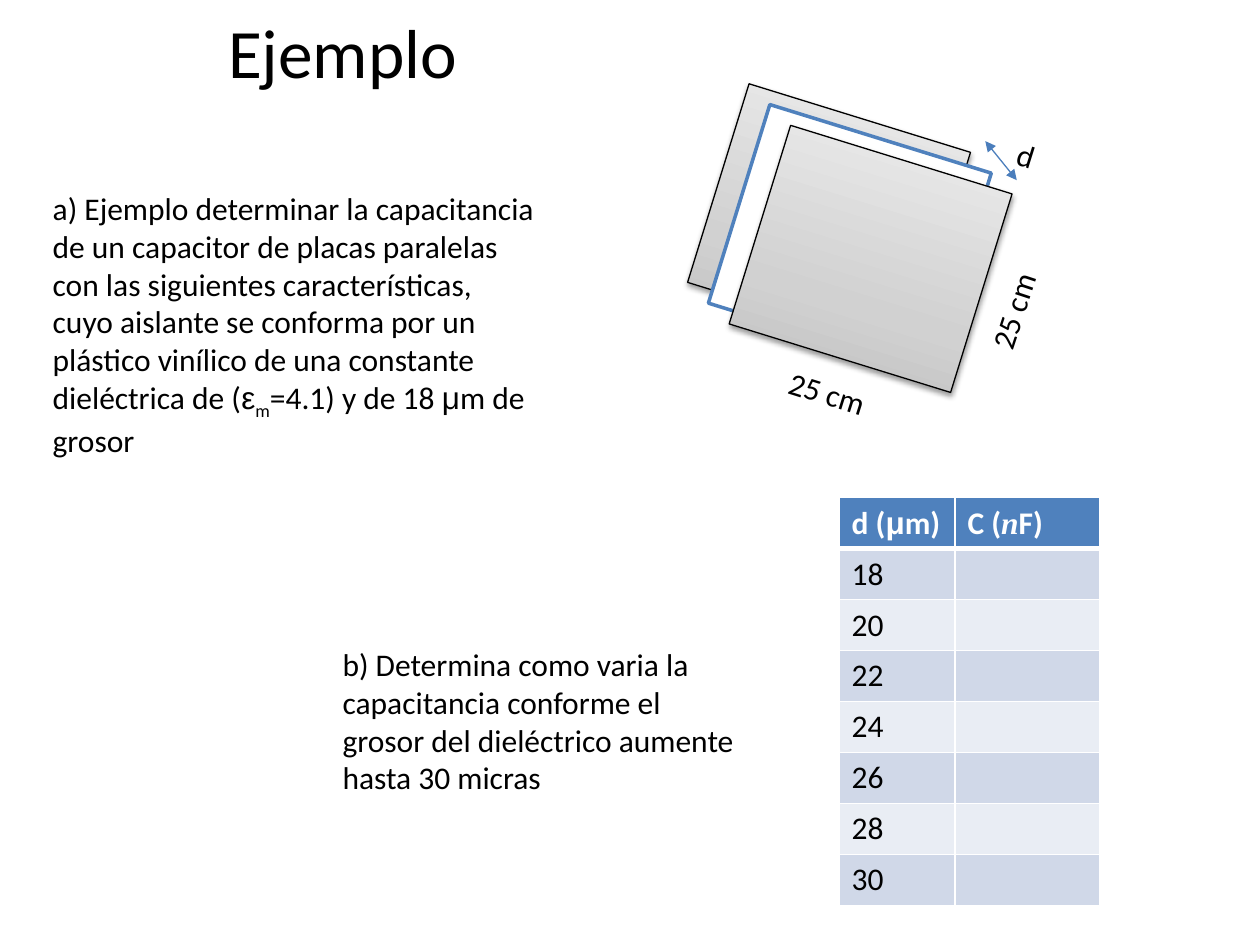
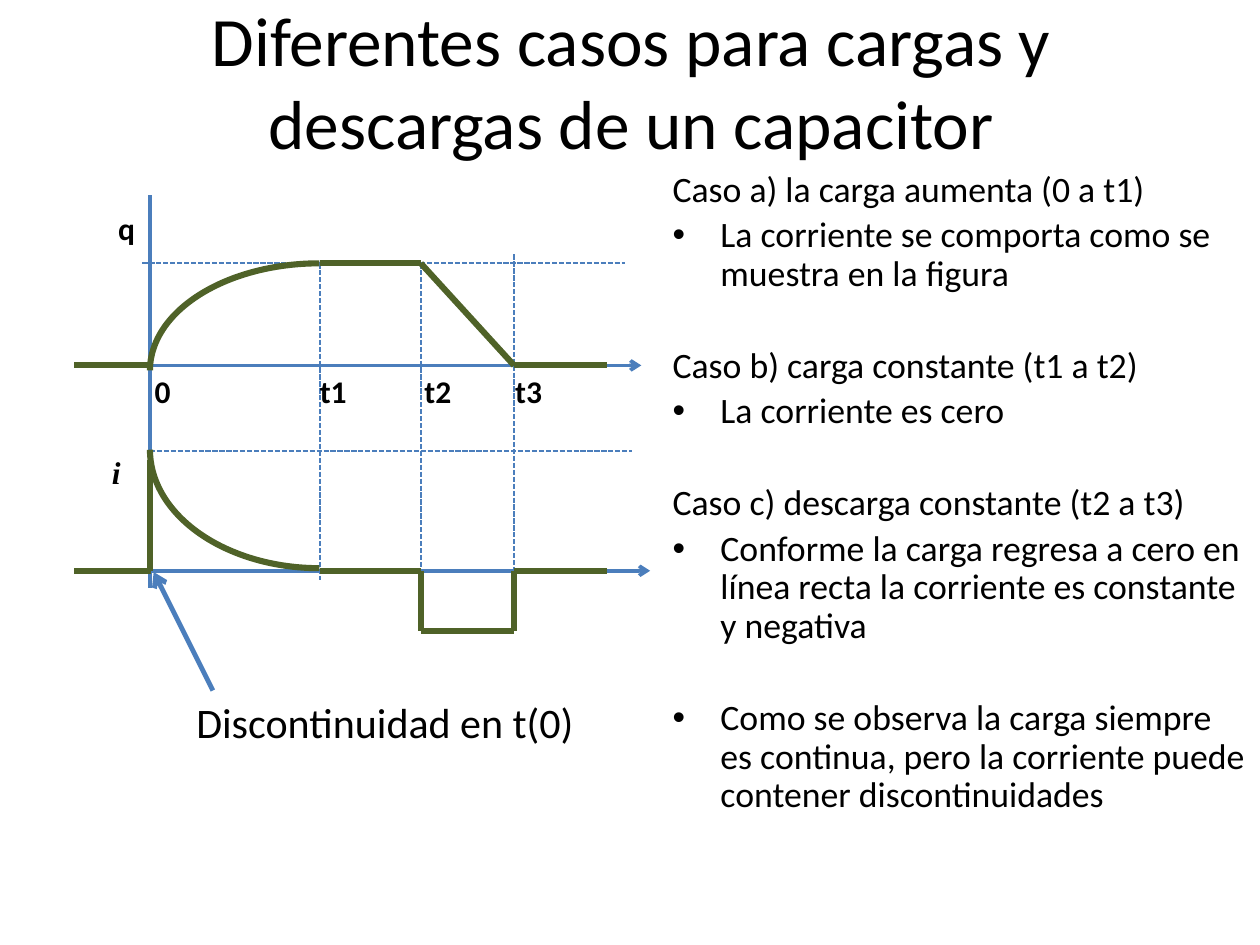
"""Builds two slides on capacitors: a worked example and charge/discharge cases."""
from copy import deepcopy
from dataclasses import dataclass, field
from typing import NamedTuple

from pptx import Presentation, oxml, util as u
from pptx.dml.color import RGBColor
from pptx.enum import dml, shapes, text
from pptx.oxml import ns

COLORS = {"ink": "000000", "paper": "FFFFFF", "header": "4F81BD", "axis": "4B7EBC",
          "trace": "4F6228", "odd_row": "D0D8E8", "even_row": "E9EDF4"}
PLATE_STOPS = ((0, "BDBDBD"), (0.35, "D1D1D1"), (1, "EEEEEE"))
BODY_FONT = {"name": "Calibri", "size": u.Pt(18), "bold": False, "italic": False}
TITLE = {"size": u.Pt(39.6)}
GREEK = {"name": "Arial"}
SYMBOL = {"name": "Times New Roman", "italic": True}
BOLD = {"bold": True}
CASES = {"size": u.Pt(20.4)}


class Box(NamedTuple):
    left: float
    top: float
    width: float
    height: float

    def lengths(self) -> list[u.Length]:
        return [u.Inches(value) for value in self]


class Run(NamedTuple):
    words: str
    font: dict = {}
    baseline: int = 0


@dataclass
class Para:
    runs: list[Run]
    bullet: bool = False
    format: dict = field(default_factory=dict)


@dataclass
class Passage:
    box: Box
    paras: list[Para]
    rotation: float = 0
    wrap: bool = True
    anchor: text.MSO_ANCHOR = text.MSO_ANCHOR.TOP


class Stroke(NamedTuple):
    color: str
    width: float
    dashed: bool = False
    head: str = ""
    tail: str = ""


class Segment(NamedTuple):
    x1: float
    y1: float
    x2: float
    y2: float
    stroke: Stroke


AXIS = Stroke("axis", 2)
TIME_AXIS = Stroke("axis", 2, tail="arrow")
GUIDE = Stroke("axis", 1, dashed=True)
TRACE = Stroke("trace", 3.5)


def rgb(name: str) -> RGBColor:
    return RGBColor.from_string(COLORS.get(name, name))


def assign(target, values: dict) -> None:
    for key, value in values.items():
        setattr(target, key, value)


def write_runs(paragraph, runs: list[Run], color: str = "ink") -> None:
    for piece in runs:
        run = paragraph.add_run()
        run.text = piece.words
        assign(run.font, BODY_FONT | piece.font)
        run.font.color.rgb = rgb(color)
        if piece.baseline:
            run.font._element.set("baseline", str(piece.baseline))


def write_passage(slide, passage: Passage) -> None:
    holder = slide.shapes.add_textbox(*passage.box.lengths())
    holder.rotation = passage.rotation
    frame = holder.text_frame
    assign(frame, {"word_wrap": passage.wrap, "vertical_anchor": passage.anchor})
    for index, para in enumerate(passage.paras):
        paragraph = frame.paragraphs[0] if index == 0 else frame.add_paragraph()
        assign(paragraph, para.format)
        if para.bullet:
            props = paragraph._p.get_or_add_pPr()
            props.set("marL", str(u.Inches(0.38)))
            props.set("indent", str(u.Inches(-0.38)))
            props.append(oxml.parse_xml(f'<a:buFont {ns.nsdecls("a")} typeface="Arial"/>'))
            props.append(oxml.parse_xml(f'<a:buChar {ns.nsdecls("a")} char="•"/>'))
        write_runs(paragraph, para.runs)


def write_title(slide, box: Box, words: str) -> None:
    centred = Para([Run(words, TITLE)], format={"alignment": text.PP_ALIGN.CENTER})
    write_passage(slide, Passage(box, [centred], anchor=text.MSO_ANCHOR.MIDDLE))


def write_label(slide, left: float, top: float, words: str, font: dict = {},
                width: float = 0.5, rotation: float = 0) -> None:
    write_passage(slide, Passage(Box(left, top, width, 0.4), [Para([Run(words, font)])],
                                 rotation, wrap=False))


def apply_stroke(line, stroke: Stroke) -> None:
    line.color.rgb = rgb(stroke.color)
    line.width = u.Pt(stroke.width)
    if stroke.dashed:
        line.dash_style = dml.MSO_LINE.SQUARE_DOT


def draw_segment(slide, segment: Segment) -> None:
    ends = [u.Inches(value) for value in segment[:4]]
    link = slide.shapes.add_connector(shapes.MSO_CONNECTOR.STRAIGHT, *ends)
    stroke = segment.stroke
    apply_stroke(link.line, stroke)
    for tag, arrow in (("headEnd", stroke.head), ("tailEnd", stroke.tail)):
        if arrow:
            link.line._get_or_add_ln().append(
                oxml.parse_xml(f'<a:{tag} {ns.nsdecls("a")} type="{arrow}"/>'))
    link._element.spPr.append(oxml.parse_xml(f'<a:effectLst {ns.nsdecls("a")}/>'))


def draw_arc(slide, box: Box, flips: tuple[str, ...]) -> None:
    curve = slide.shapes.add_shape(shapes.MSO_SHAPE.ARC, *box.lengths())
    curve.shadow.inherit = False
    curve.fill.background()
    apply_stroke(curve.line, TRACE)
    for flip in flips:
        curve._element.spPr.xfrm.set(flip, "1")


def draw_sheet(slide, box: Box, stroke: Stroke, metal: bool) -> None:
    sheet = slide.shapes.add_shape(shapes.MSO_SHAPE.RECTANGLE, *box.lengths())
    sheet.rotation = 17.2
    sheet.shadow.inherit = False
    apply_stroke(sheet.line, stroke)
    if not metal:
        sheet.fill.solid()
        sheet.fill.fore_color.rgb = rgb("paper")
        return
    sheet.fill.gradient()
    sheet.fill.gradient_angle = 90
    stop_list = sheet._element.spPr.find(ns.qn("a:gradFill")).find(ns.qn("a:gsLst"))
    stop_list.append(deepcopy(stop_list[-1]))
    for stop, (position, color) in zip(sheet.fill.gradient_stops, PLATE_STOPS):
        stop.position = position
        stop.color.rgb = rgb(color)
    effects = sheet._element.spPr.find(ns.qn("a:effectLst"))
    effects.append(oxml.parse_xml(
        f'<a:outerShdw {ns.nsdecls("a")} blurRad="{u.Pt(3.1)}" dist="{u.Pt(1.6)}" '
        f'dir="5400000" rotWithShape="0"><a:srgbClr val="{COLORS["ink"]}">'
        '<a:alpha val="38000"/></a:srgbClr></a:outerShdw>'))


def style_cell(cell, fill: str, top: float, bottom: float) -> None:
    for side, width in (("L", 1), ("R", 1), ("T", top), ("B", bottom)):
        cell._tc.get_or_add_tcPr().append(oxml.parse_xml(
            f'<a:ln{side} {ns.nsdecls("a")} w="{u.Pt(width)}"><a:solidFill>'
            f'<a:srgbClr val="{COLORS["paper"]}"/></a:solidFill></a:ln{side}>'))
    cell.fill.solid()
    cell.fill.fore_color.rgb = rgb(fill)


def draw_thickness_table(slide) -> None:
    headings = [[Run("d (", BOLD), Run("μ", BOLD | GREEK), Run("m)", BOLD)],
                [Run("C (", BOLD), Run("n", BOLD | SYMBOL), Run("F)", BOLD)]]
    rows = [headings] + [[[Run(str(d))], [Run("")]] for d in range(18, 31, 2)]
    box = Box(6.66, 3.95, 2.07, 3.24)
    table = slide.shapes.add_table(len(rows), 2, *box.lengths()).table
    for column, width in zip(table.columns, (0.92, 1.15)):
        column.width = u.Inches(width)
    for r, row in enumerate(rows):
        fill = "header" if r == 0 else "odd_row" if r % 2 else "even_row"
        for c, runs in enumerate(row):
            cell = table.cell(r, c)
            style_cell(cell, fill, 3 if r == 1 else 1, 3 if r == 0 else 1)
            write_runs(cell.text_frame.paragraphs[0], runs, "ink" if r else "paper")


def build_example(slide) -> None:
    write_title(slide, Box(1.54, 0.35, 2.36, 0.11), "Ejemplo")
    write_passage(slide, Passage(Box(0.32, 1.45, 4.04, 2.22), [Para([
        Run("a) Ejemplo determinar la capacitancia de un capacitor de placas paralelas con las "
            "siguientes características, cuyo aislante se conforma por un plástico vinílico de "
            "una constante dieléctrica de ("),
        Run("ε", GREEK), Run("m", baseline=-25000), Run("=4.1) y de 18 "),
        Run("μ", GREEK), Run("m de grosor")])]))
    plate, dielectric = Stroke("ink", 0.75), Stroke("header", 2)
    for layer, stroke in enumerate((plate, dielectric, plate)):
        shift = 0.33 * layer / 2
        draw_sheet(slide, Box(5.66 + shift, 0.9 + shift, 1.84, 1.65), stroke, stroke is plate)
    write_label(slide, 6.16, 2.92, "25 cm", width=0.82, rotation=17.5)
    write_label(slide, 7.63, 2.26, "25 cm", width=0.82, rotation=288.3)
    write_passage(slide, Passage(Box(2.62, 5.07, 3.41, 1.31), [Para([
        Run("b) Determina como varia la capacitancia conforme el grosor del dieléctrico "
            "aumente hasta 30 micras")])]))
    draw_thickness_table(slide)
    gap = Stroke("axis", 0.75, head="triangle", tail="triangle")
    draw_segment(slide, Segment(7.82, 1.12, 8.07, 1.43, gap))
    write_label(slide, 7.98, 1.03, "d", width=0.34, rotation=17.5)


def draw_waveforms(slide) -> None:
    start, t0, t1, t2, t3, end = 0.59, 1.19, 2.54, 3.34, 4.08, 4.82
    q_peak, q_zero, i_peak, i_zero, i_low = 2.09, 2.9, 3.58, 4.53, 5.01
    for segment in (
            Segment(t0, 1.55, t0, 4.67, AXIS),
            Segment(t0, i_peak, 5.02, i_peak, GUIDE),
            Segment(t0, q_zero, 5.09, q_zero, TIME_AXIS),
            Segment(1.13, q_peak, 4.96, q_peak, GUIDE),
            Segment(t1, q_peak, t1, 4.6, GUIDE),
            Segment(t2, q_peak, t2, 4.6, GUIDE),
            Segment(t0, i_zero, 5.16, i_zero, TIME_AXIS),
            Segment(t3, 2.02, t3, i_zero, GUIDE)):
        draw_segment(slide, segment)
    charge = [(t1, q_peak, t2, q_peak), (t2, q_peak, t3, q_zero)]
    current = [(t1, i_zero, t2, i_zero), (t2, i_zero, t2, i_low), (t2, i_low, t3, i_low),
               (t3, i_low, t3, i_zero), (t0, 3.65, t0, i_zero)]
    rest = [(x1, y, x2, y) for y in (q_zero, i_zero) for x1, x2 in ((start, 1.2), (t3, end))]
    for ends in charge + current + rest:
        draw_segment(slide, Segment(*ends, TRACE))
    draw_arc(slide, Box(t0, q_peak, 2.69, 1.7), ("flipH",))
    draw_arc(slide, Box(t0, 2.63, 2.69, 1.88), ("flipH", "flipV"))
    for left, tick in ((1.13, "0"), (2.44, "t1"), (3.27, "t2"), (3.99, "t3")):
        write_label(slide, left, q_zero, tick, BOLD)
    write_label(slide, 0.84, 1.61, "q", BOLD)
    write_label(slide, 0.79, 3.55, "i", BOLD | SYMBOL)


def build_cases(slide) -> None:
    write_title(slide, Box(0.51, 0.21, 9, 0.85),
                "Diferentes casos para cargas y descargas de un capacitor")
    draw_waveforms(slide)
    close = {"line_spacing": 0.9, "space_before": u.Pt(4)}
    apart = close | {"space_before": u.Pt(30.5)}
    lines = [
        ("Caso a) la carga aumenta (0 a t1)", False, close),
        ("La corriente se comporta como se muestra en la figura", True, close),
        ("Caso b) carga constante (t1 a t2)", False, apart),
        ("La corriente es cero", True, close),
        ("Caso c) descarga constante (t2 a t3)", False, apart),
        ("Conforme la carga regresa a cero en línea recta la corriente es constante y negativa",
         True, close),
        ("Como se observa la carga siempre es continua, pero la corriente puede contener "
         "discontinuidades", True, apart)]
    write_passage(slide, Passage(Box(5.24, 1.31, 4.76, 5.28), [
        Para([Run(words, CASES)], bullet, spacing) for words, bullet, spacing in lines]))
    draw_segment(slide, Segment(1.69, 5.48, 1.22, 4.54, Stroke("axis", 2.75, tail="arrow")))
    write_passage(slide, Passage(Box(1.46, 5.48, 3.23, 0.71), [
        Para([Run("Discontinuidad en t(0)", {"size": u.Pt(24)})])]))


def main() -> None:
    deck = Presentation()
    assign(deck, {"slide_width": u.Inches(10), "slide_height": u.Inches(7.5)})
    for build in (build_example, build_cases):
        build(deck.slides.add_slide(deck.slide_layouts[6]))
    deck.save("out.pptx")


if __name__ == "__main__":
    main()
